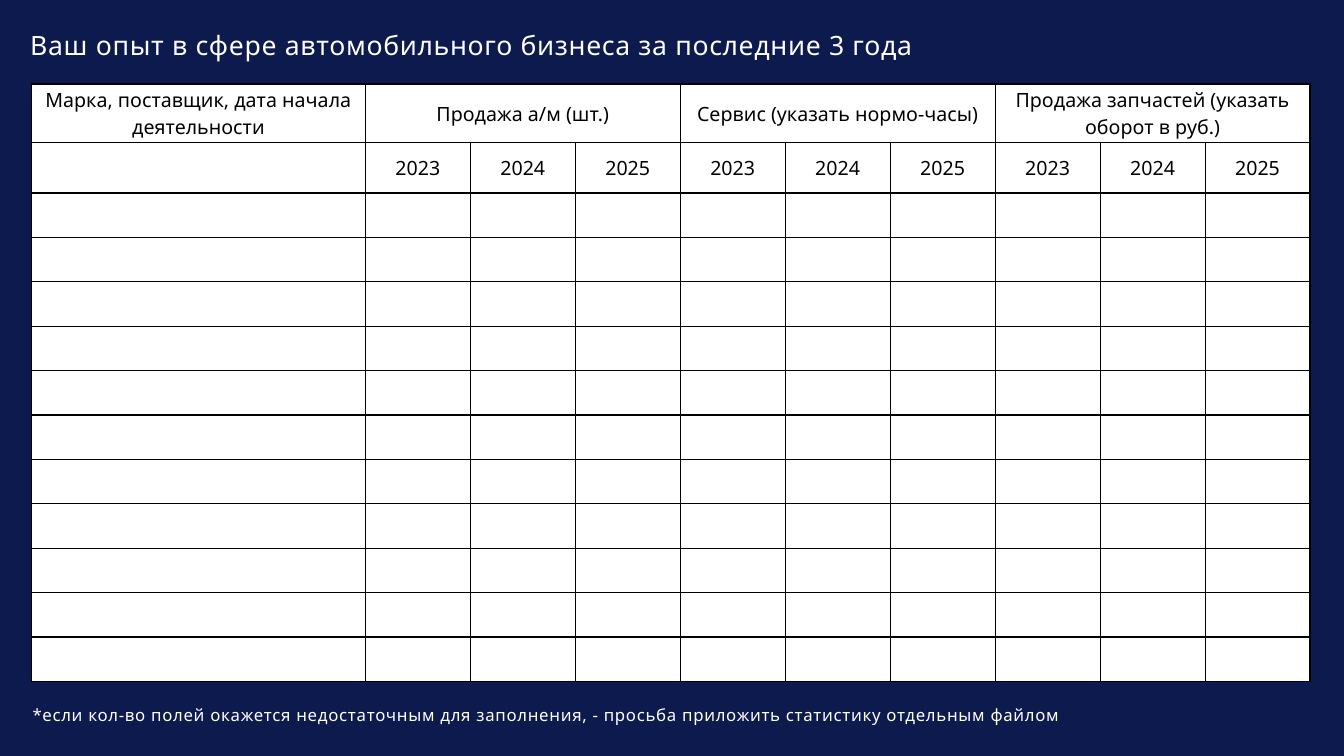
from lxml.etree import SubElement
from pptx import Presentation
from pptx.dml.color import RGBColor
from pptx.enum.text import MSO_ANCHOR, MSO_AUTO_SIZE, PP_ALIGN
from pptx.oxml.ns import qn
from pptx.util import Pt

COLORS = {"navy": "0D1A4E", "white": "FFFFFF", "black": "000000"}
FONT = "Noto Sans"
GROUPS = ["Продажа а/м (шт.)", "Сервис (указать нормо-часы)",
          "Продажа запчастей (указать оборот в руб.)"]
YEARS = ["2023", "2024", "2025"]
BRAND_HEADER = "Марка, поставщик, дата начала деятельности"
TITLE = "Ваш опыт в сфере автомобильного бизнеса за последние 3 года"
FOOTNOTE = ("*если кол-во полей окажется недостаточным для заполнения, "
            "- просьба приложить статистику отдельным файлом")
BLANK_ROWS = 11
BRAND_WIDTH, HEADER_HEIGHT, YEAR_HEIGHT = 238.5, 41.6, 36.2


def apply(obj, values):
    """Set each attribute of obj named in values."""
    for name, value in values.items():
        setattr(obj, name, value)


def set_font(font, size, color):
    """Give a font the slide typeface, a size and a colour."""
    apply(font, {"name": FONT, "size": Pt(size), "bold": False})
    font.color.rgb = RGBColor.from_string(COLORS[color])


def fill_solid(fill, color):
    """Fill with one colour from the palette."""
    fill.solid()
    fill.fore_color.rgb = RGBColor.from_string(COLORS[color])


def add_caption(sp, box, text, size):
    """Place a line of spaced white text in the given box."""
    apply(sp, dict(zip(("left", "top", "width", "height"), map(Pt, box))))
    tf = sp.text_frame
    apply(tf, {"word_wrap": True, "auto_size": MSO_AUTO_SIZE.SHAPE_TO_FIT_TEXT,
               "vertical_anchor": MSO_ANCHOR.TOP, "margin_left": Pt(0.7),
               "margin_top": Pt(0.7), "margin_right": 0, "margin_bottom": 0})
    p = tf.paragraphs[0]
    p.alignment = PP_ALIGN.LEFT
    r = p.add_run()
    r.text = text
    set_font(r.font, size, "white")
    r.font._element.set("spc", "50")


def add_borders(cell):
    """Draw a thin black line on all four sides of a cell."""
    tc_pr = cell._tc.get_or_add_tcPr()
    for side in ("lnL", "lnR", "lnT", "lnB"):
        ln = SubElement(tc_pr, qn(f"a:{side}"), w=str(Pt(1)))
        fill = SubElement(ln, qn("a:solidFill"))
        SubElement(fill, qn("a:srgbClr"), val=COLORS["black"])


def format_cell(cell):
    """Style a cell as a white bordered box with centred text."""
    apply(cell, {"vertical_anchor": MSO_ANCHOR.MIDDLE, "margin_left": Pt(0.7),
                 "margin_right": Pt(0.7), "margin_top": Pt(0.7),
                 "margin_bottom": 0})
    add_borders(cell)
    fill_solid(cell.fill, "white")
    p = cell.text_frame.paragraphs[0]
    p.alignment = PP_ALIGN.CENTER
    set_font(p.font, 14, "black")
    for r in p.runs:
        set_font(r.font, 14, "black")


def add_experience_table(slide, box):
    """Build the blank form with its two header rows in the given box."""
    years = YEARS * len(GROUPS)
    rows, cols = BLANK_ROWS + 2, len(years) + 1
    left, top, width, height = box
    table = slide.shapes.add_table(rows, cols, *map(Pt, box)).table
    apply(table, {"first_row": False, "horz_banding": False})

    year_width = (width - BRAND_WIDTH) / len(years)
    blank_height = (height - HEADER_HEIGHT - YEAR_HEIGHT) / BLANK_ROWS
    for col, w in zip(table.columns, [BRAND_WIDTH] + [year_width] * len(years)):
        col.width = Pt(w)
    heights = [HEADER_HEIGHT, YEAR_HEIGHT] + [blank_height] * BLANK_ROWS
    for row, h in zip(table.rows, heights):
        row.height = Pt(h)

    table.cell(0, 0).text = BRAND_HEADER
    for i, group in enumerate(GROUPS):
        first = 1 + i * len(YEARS)
        table.cell(0, first).merge(table.cell(0, first + len(YEARS) - 1))
        table.cell(0, first).text = group
    for c, year in enumerate(years, 1):
        table.cell(1, c).text = year
    for cell in table.iter_cells():
        format_cell(cell)


def build_experience_slide(prs):
    """Add the slide with title, form and footnote."""
    slide = prs.slides.add_slide(prs.slide_layouts[5])
    fill_solid(slide.background.fill, "navy")
    add_caption(slide.shapes.title, (20.9, 20.2, 903.6, 24.5), TITLE, 19)
    add_experience_table(slide, (22.5, 60, 913.5, 427))
    note_box = (22.5, 502.6, 903.6, 15.8)
    note = slide.shapes.add_textbox(*map(Pt, note_box))
    add_caption(note, note_box, FOOTNOTE, 12)


def main():
    """Create and save the presentation."""
    prs = Presentation()
    apply(prs, {"slide_width": Pt(960), "slide_height": Pt(540)})
    build_experience_slide(prs)
    prs.save("out.pptx")


if __name__ == "__main__":
    main()
